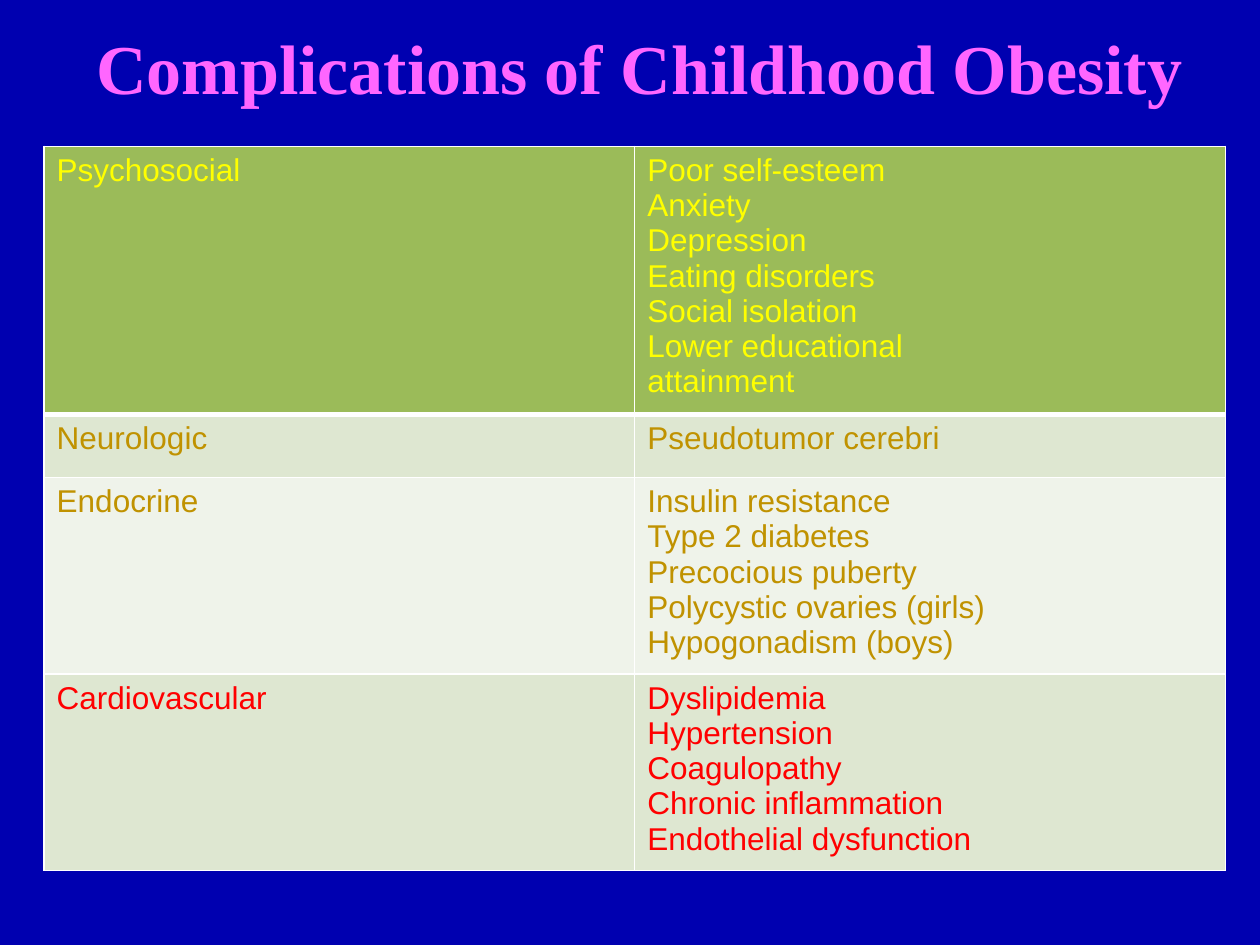
from dataclasses import dataclass

from lxml import etree
from pptx import Presentation
from pptx import util as u
from pptx.dml.color import RGBColor
from pptx.enum import text
from pptx.oxml.ns import qn


@dataclass(frozen=True)
class Theme:
    background: str = "0000B0"
    title: str = "FF66FF"
    header_fill: str = "9BBB59"
    dark_band: str = "DEE7D1"
    light_band: str = "EFF3EA"
    yellow: str = "FFFF00"
    gold: str = "C09200"
    red: str = "FF0000"
    border: str = "FFFFFF"
    title_font: str = "Times New Roman"
    body_font: str = "Arial"
    title_size: int = 40
    body_size: int = 18
    thin: int = 1
    thick: int = 3


@dataclass(frozen=True)
class System:
    name: str
    complications: tuple[str, ...]
    fill: str
    color: str
    height: float
    bottom_border: int


THEME = Theme()

SYSTEMS = (
    System("Psychosocial",
           ("Poor self-esteem", "Anxiety", "Depression", "Eating disorders",
            "Social isolation", "Lower educational", "attainment"),
           THEME.header_fill, THEME.yellow, 5.41, THEME.thick),
    System("Neurologic", ("Pseudotumor cerebri",),
           THEME.dark_band, THEME.gold, 1.27, THEME.thin),
    System("Endocrine",
           ("Insulin resistance", "Type 2 diabetes", "Precocious puberty",
            "Polycystic ovaries (girls)", "Hypogonadism (boys)"),
           THEME.light_band, THEME.gold, 3.96, THEME.thin),
    System("Cardiovascular",
           ("Dyslipidemia", "Hypertension", "Coagulopathy",
            "Chronic inflammation", "Endothelial dysfunction"),
           THEME.dark_band, THEME.red, 3.96, THEME.thin),
)


def write(frame, lines, *, font: str, size: int, color: str,
          bold: bool = False, align=text.PP_ALIGN.LEFT) -> None:
    """Fill a text frame with one paragraph per line."""
    for index, line in enumerate(lines):
        para = frame.add_paragraph() if index else frame.paragraphs[0]
        para.alignment = align
        span = para.add_run()
        span.text = line
        span.font.name = font
        span.font.size = u.Pt(size)
        span.font.bold = bold
        span.font.color.rgb = RGBColor.from_string(color)


def set_borders(cell, bottom: int) -> None:
    """Insert the border lines ahead of the fill, as the schema requires."""
    properties = cell._tc.get_or_add_tcPr()
    widths = {"lnL": THEME.thin, "lnR": THEME.thin, "lnT": THEME.thin, "lnB": bottom}
    for index, (side, width) in enumerate(widths.items()):
        line = etree.Element(qn(f"a:{side}"), w=str(u.Pt(width)))
        fill = etree.SubElement(line, qn("a:solidFill"))
        etree.SubElement(fill, qn("a:srgbClr"), val=THEME.border)
        properties.insert(index, line)


def add_title(slide, title: str) -> None:
    box = slide.shapes.title
    box.left, box.top, box.width, box.height = map(u.Cm, (0.89, 0.33, 24, 2.01))
    box.text_frame.vertical_anchor = text.MSO_ANCHOR.MIDDLE
    write(box.text_frame, [title], font=THEME.title_font, size=THEME.title_size,
          color=THEME.title, bold=True, align=text.PP_ALIGN.CENTER)


def add_systems_table(slide, systems: tuple[System, ...]) -> None:
    height = sum(system.height for system in systems)
    table = slide.shapes.add_table(len(systems), 2, u.Cm(0.89), u.Cm(2.95),
                                   u.Cm(23.81), u.Cm(height)).table
    for row, system in zip(table.rows, systems):
        row.height = u.Cm(system.height)
        for cell, lines in zip(row.cells, ((system.name,), system.complications)):
            cell.fill.solid()
            cell.fill.fore_color.rgb = RGBColor.from_string(system.fill)
            set_borders(cell, system.bottom_border)
            write(cell.text_frame, lines, font=THEME.body_font,
                  size=THEME.body_size, color=system.color)


def main() -> None:
    deck = Presentation()
    deck.slide_width, deck.slide_height = u.Cm(25.4), u.Cm(19.05)
    slide = deck.slides.add_slide(deck.slide_layouts.get_by_name("Title Only"))
    slide.background.fill.solid()
    slide.background.fill.fore_color.rgb = RGBColor.from_string(THEME.background)
    add_title(slide, "Complications of Childhood Obesity")
    add_systems_table(slide, SYSTEMS)
    deck.save("out.pptx")


if __name__ == "__main__":
    main()
